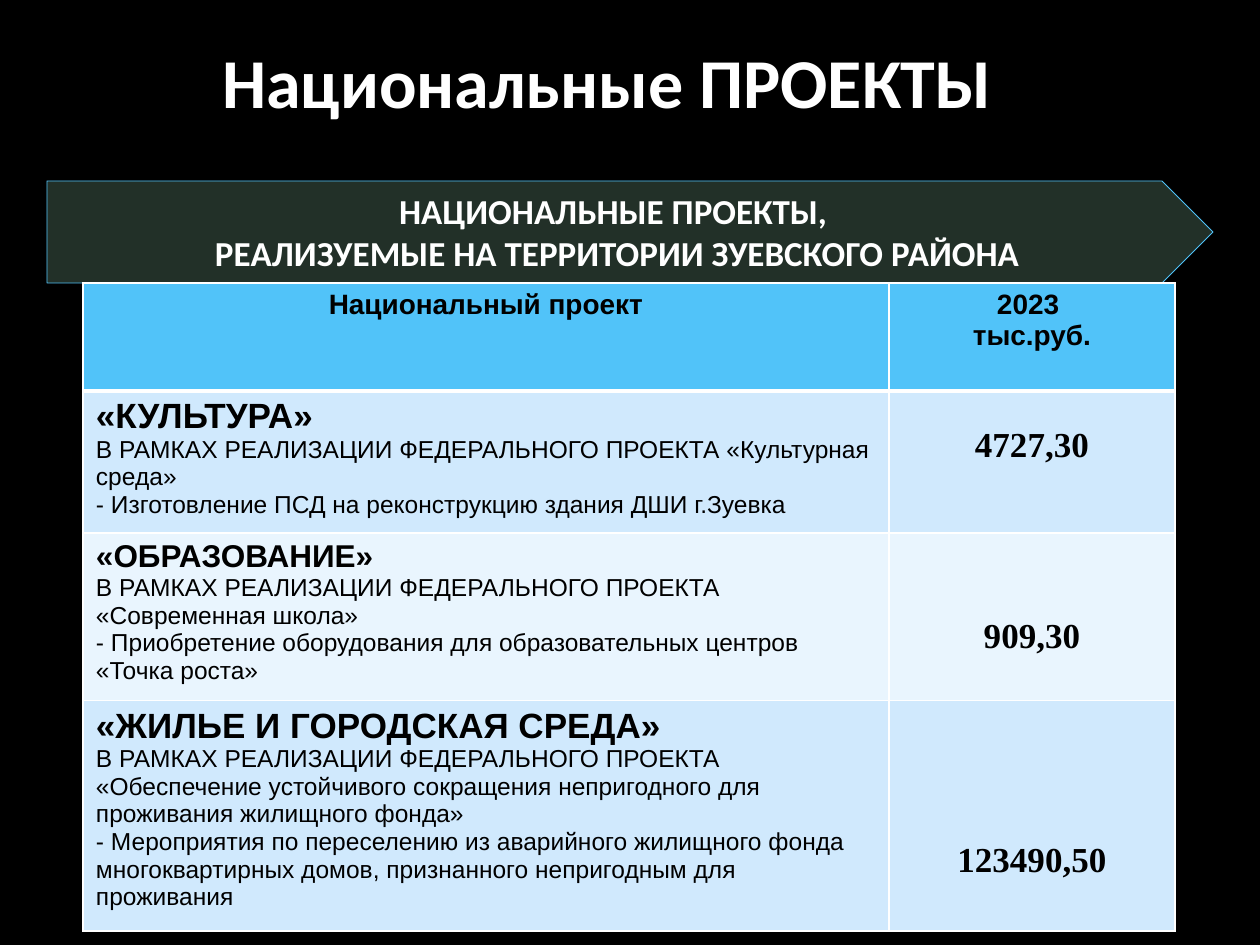
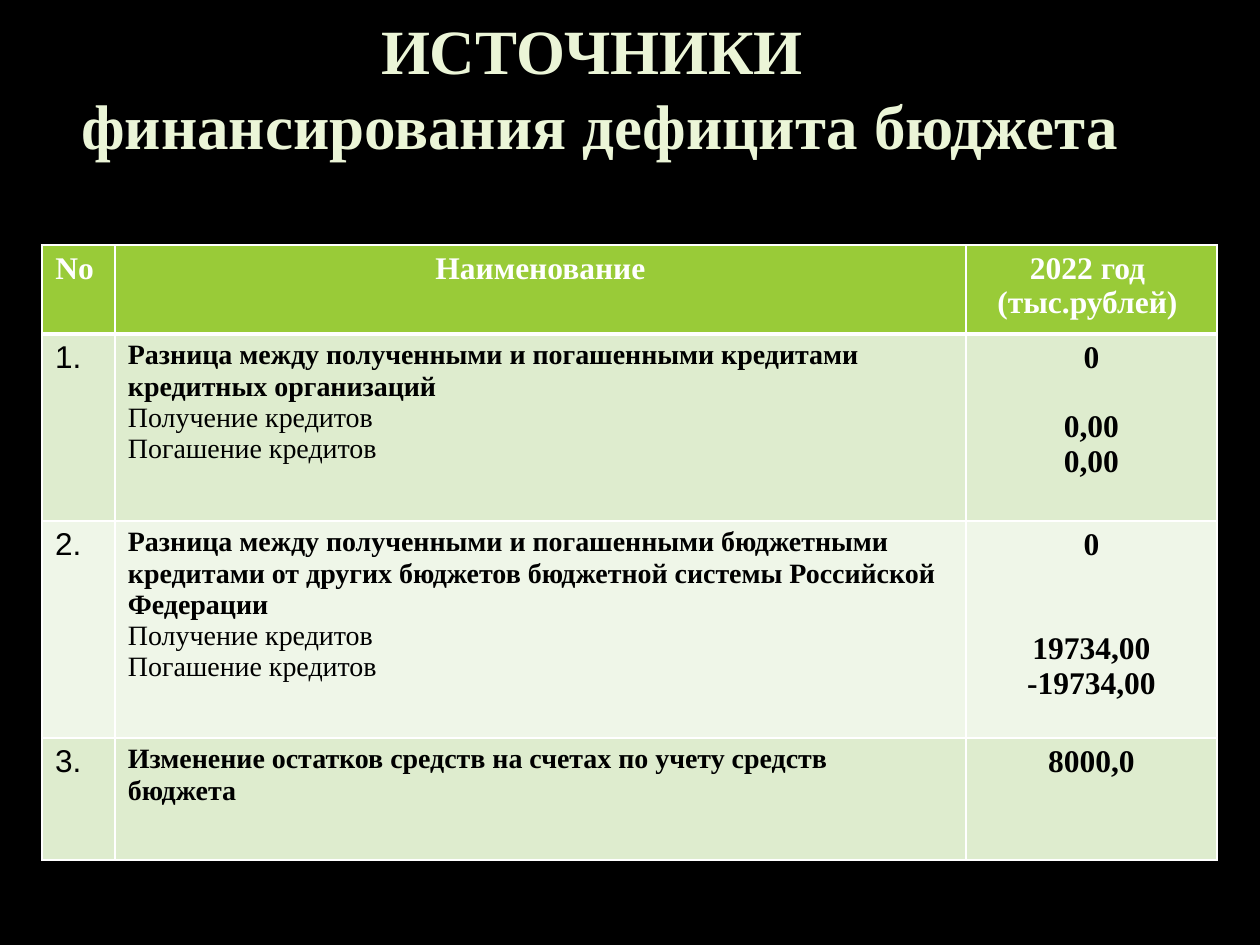
from dataclasses import dataclass
from typing import Sequence

from lxml import etree
from pptx import Presentation
from pptx.dml.color import RGBColor
from pptx.enum.shapes import MSO_SHAPE as SHAPE
from pptx.enum.text import MSO_ANCHOR as ANCHOR, PP_ALIGN as ALIGN
from pptx.oxml.ns import qn
from pptx.util import Emu, Pt

BLACK = RGBColor(0x00, 0x00, 0x00)
WHITE = RGBColor(0xFF, 0xFF, 0xFF)
BAND = RGBColor(0x22, 0x30, 0x28)
BLUE = RGBColor(0x51, 0xC3, 0xF9)
BLUE_ROWS = (RGBColor(0xD0, 0xE9, 0xFD), RGBColor(0xE9, 0xF5, 0xFE))
GREEN = RGBColor(0x99, 0xCB, 0x38)
GREEN_ROWS = (RGBColor(0xDE, 0xEC, 0xCE), RGBColor(0xEF, 0xF6, 0xE8))
PALE_GREEN = RGBColor(0xEB, 0xF5, 0xD7)

SANS, SERIF, TITLE_FONT = "Arial", "Times New Roman", "Calibri"
PX_PER_INCH = 126
PAD_X, PAD_Y = 13, 6


@dataclass(frozen=True)
class Line:
    text: str
    size: int
    font: str
    bold: bool = True
    color: RGBColor = BLACK
    before: int = 0


@dataclass(frozen=True)
class Cell:
    lines: Sequence[Line]
    align: ALIGN = ALIGN.LEFT
    top: int = PAD_Y


@dataclass(frozen=True)
class Grid:
    left: int
    top: int
    widths: Sequence[int]
    heights: Sequence[int]
    header_fill: RGBColor
    row_fills: Sequence[RGBColor]
    rows: Sequence[Sequence[Cell]]


def px(n: int) -> Emu:
    return Emu(round(n * 914400 / PX_PER_INCH))


def write(tf, lines: Sequence[Line], align: ALIGN) -> None:
    for i, line in enumerate(lines):
        p = tf.add_paragraph() if i else tf.paragraphs[0]
        p.text = line.text
        p.alignment = align
        if line.before:
            p.space_before = Pt(line.before)
        for r in p.runs:
            r.font.size, r.font.name = Pt(line.size), line.font
            r.font.bold, r.font.color.rgb = line.bold, line.color


def set_borders(cell, top: int, bottom: int) -> None:
    """Give the cell white borders; top and bottom are widths in points."""
    tc_pr = cell._tc.get_or_add_tcPr()
    for i, (side, width) in enumerate(zip("LRTB", (1, 1, top, bottom))):
        ln = etree.Element(qn(f"a:ln{side}"), w=str(Pt(width)))
        fill = etree.SubElement(ln, qn("a:solidFill"))
        etree.SubElement(fill, qn("a:srgbClr"), val=str(WHITE))
        tc_pr.insert(i, ln)


def add_grid(s, grid: Grid) -> None:
    frame = s.shapes.add_table(
        len(grid.heights), len(grid.widths), px(grid.left), px(grid.top),
        px(sum(grid.widths)), px(sum(grid.heights)))
    table = frame.table
    for column, width in zip(table.columns, grid.widths):
        column.width = px(width)
    for i, (row, height) in enumerate(zip(grid.rows, grid.heights)):
        table.rows[i].height = px(height)
        for j, content in enumerate(row):
            cell = table.cell(i, j)
            cell.margin_left = cell.margin_right = px(PAD_X)
            cell.margin_top, cell.margin_bottom = px(content.top), px(PAD_Y)
            cell.fill.solid()
            cell.fill.fore_color.rgb = (
                grid.row_fills[(i - 1) % 2] if i else grid.header_fill)
            set_borders(cell, 3 if i == 1 else 1, 1 if i else 3)
            write(cell.text_frame, content.lines, content.align)


def add_title(s, box: Sequence[int], line: Line, anchor: ANCHOR,
              wrap: bool = True) -> None:
    tf = s.shapes.add_textbox(*map(px, box)).text_frame
    tf.word_wrap, tf.vertical_anchor = wrap, anchor
    write(tf, [line], ALIGN.CENTER)


def add_arrow_band(s, box: Sequence[int], lines: Sequence[Line]) -> None:
    sp = s.shapes.add_shape(SHAPE.PENTAGON, *map(px, box))
    sp.shadow.inherit = False
    sp.fill.solid()
    sp.fill.fore_color.rgb = BAND
    sp.line.color.rgb, sp.line.width = BLUE, Pt(0.5)
    tf = sp.text_frame
    tf.word_wrap, tf.vertical_anchor = False, ANCHOR.MIDDLE
    write(tf, lines, ALIGN.CENTER)


def add_black_slide(prs):
    s = prs.slides.add_slide(prs.slide_layouts[6])
    s.background.fill.solid()
    s.background.fill.fore_color.rgb = BLACK
    return s


def header(font: str, size: int, color: RGBColor, *texts: str) -> Cell:
    return Cell([Line(t, size, font, color=color) for t in texts], ALIGN.CENTER)


def project_row(name: str, size: int, details: Sequence[str],
                amount: str, amount_top: int) -> list[Cell]:
    body = [Line(t, 14, SANS, bold=False) for t in details]
    return [Cell([Line(name, size, SANS), *body]),
            Cell([Line(amount, 20, SERIF)], ALIGN.CENTER, amount_top)]


def source_row(number: str, heading: Sequence[str], total: str,
               flows: Sequence[str] = (), gap: int = 0) -> list[Cell]:
    """Build a deficit source; gap sets its credit flows below the total."""
    names = [Line(t, 16, SERIF) for t in heading]
    if flows:
        names += [Line(t, 16, SERIF, bold=False)
                  for t in ("Получение кредитов", "Погашение кредитов")]
    amounts = [Line(total, 18, SERIF)]
    amounts += [Line(t, 18, SERIF, before=0 if i else gap)
                for i, t in enumerate(flows)]
    return [Cell([Line(number, 18, SANS, bold=False)]), Cell(names),
            Cell(amounts, ALIGN.CENTER)]


def build_projects(prs) -> None:
    s = add_black_slide(prs)
    add_title(s, (40, 21, 1134, 120),
              Line("Национальные ПРОЕКТЫ", 40, TITLE_FONT, color=WHITE),
              ANCHOR.MIDDLE)
    add_arrow_band(s, (47, 181, 1166, 102), [
        Line(t, 20, TITLE_FONT, color=WHITE) for t in (
            "НАЦИОНАЛЬНЫЕ ПРОЕКТЫ, ",
            "РЕАЛИЗУЕМЫЕ НА ТЕРРИТОРИИ ЗУЕВСКОГО РАЙОНА")])
    program = "В РАМКАХ РЕАЛИЗАЦИИ ФЕДЕРАЛЬНОГО ПРОЕКТА "
    add_grid(s, Grid(83, 283, (806, 286), (108, 135, 159, 217), BLUE, BLUE_ROWS, [
        [header(SANS, 16, BLACK, "Национальный проект"),
         header(SANS, 16, BLACK, "2023 ", "тыс.руб.")],
        project_row("«КУЛЬТУРА»", 20, [
            program + "«Культурная среда»",
            "- Изготовление ПСД на реконструкцию здания ДШИ г.Зуевка",
        ], "4727,30", 35),
        project_row("«ОБРАЗОВАНИЕ»", 18, [
            program + "«Современная школа»",
            "- Приобретение оборудования для образовательных центров "
            "«Точка роста»",
        ], "909,30", 84),
        project_row("«ЖИЛЬЕ И ГОРОДСКАЯ СРЕДА»", 20, [
            program + "«Обеспечение устойчивого сокращения непригодного "
            "для проживания жилищного фонда»",
            "- Мероприятия по переселению из аварийного жилищного фонда "
            "многоквартирных домов, признанного непригодным для проживания",
        ], "123490,50", 141),
    ]))


def build_deficit_sources(prs) -> None:
    s = add_black_slide(prs)
    add_grid(s, Grid(42, 245, (73, 851, 251), (89, 187, 217, 122), GREEN, GREEN_ROWS, [
        [header(SERIF, 18, WHITE, "No "),
         header(SERIF, 18, WHITE, "Наименование"),
         header(SERIF, 18, WHITE, "2022 год ", "(тыс.рублей) ")],
        source_row("1.", [
            "Разница между полученными и погашенными кредитами",
            "кредитных организаций",
        ], "0", ("0,00", "0,00"), 20),
        source_row("2.", [
            "Разница между полученными и погашенными бюджетными кредитами "
            "от других бюджетов бюджетной системы Российской",
            "Федерации",
        ], "0", ("19734,00", "-19734,00"), 40),
        source_row("3.", [
            "Изменение остатков средств на счетах по учету средств",
            "бюджета",
        ], "8000,0"),
    ]))
    add_title(s, (63, 5, 1074, 165),
              Line("ИСТОЧНИКИ \vфинансирования дефицита бюджета", 36, SERIF,
                   color=PALE_GREEN), ANCHOR.TOP, wrap=False)


def main() -> None:
    prs = Presentation()
    prs.slide_width, prs.slide_height = px(1260), px(945)
    build_projects(prs)
    build_deficit_sources(prs)
    prs.save("out.pptx")


if __name__ == "__main__":
    main()
